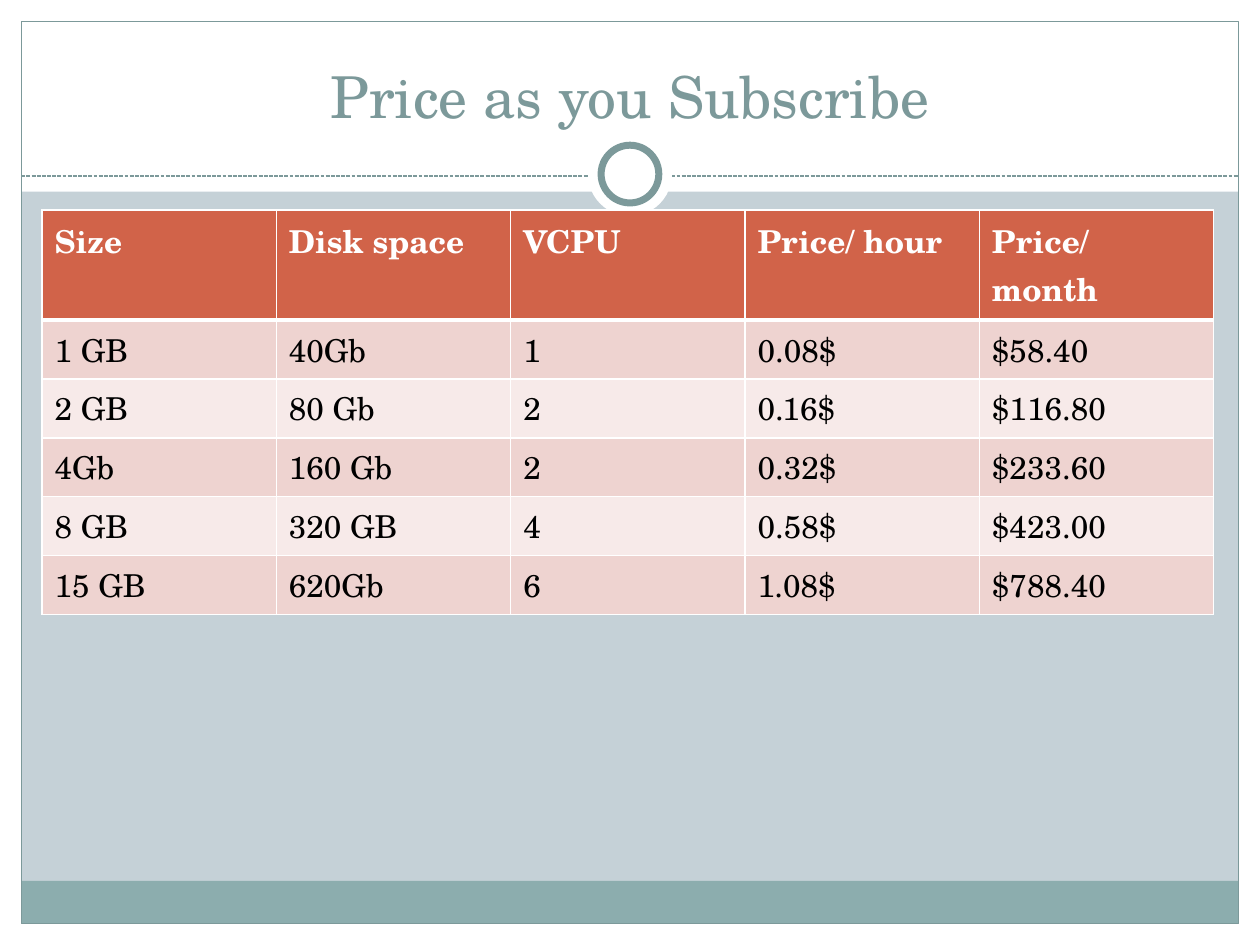
from lxml.etree import SubElement
from pptx import Presentation
from pptx.dml.color import RGBColor
from pptx.enum.dml import MSO_LINE
from pptx.enum.shapes import MSO_CONNECTOR, MSO_SHAPE
from pptx.enum.text import MSO_ANCHOR, PP_ALIGN
from pptx.oxml.ns import qn
from pptx.util import Pt

WHITE = RGBColor(0xFF, 0xFF, 0xFF)
BLACK = RGBColor(0, 0, 0)
BACKGROUND = RGBColor(0xC5, 0xD1, 0xD7)
TEAL = RGBColor(0x7C, 0x99, 0x9A)
FOOTER = RGBColor(0x8C, 0xAD, 0xAE)
HEADER = RGBColor(0xD1, 0x63, 0x49)
BANDS = (RGBColor(0xF7, 0xEA, 0xE9), RGBColor(0xEE, 0xD3, 0xD0))
FONT = "TeX Gyre Schola"
WIDTH, HEIGHT = 720, 540
MARGIN = 12.2

PRICES = [
    ("Size", "Disk space", "VCPU", "Price/ hour", "Price/ month"),
    ("1 GB", "40Gb", "1", "0.08$", "$58.40"),
    ("2 GB", "80 Gb", "2", "0.16$", "$116.80"),
    ("4Gb", "160 Gb", "2", "0.32$", "$233.60"),
    ("8 GB", "320 GB", "4", "0.58$", "$423.00"),
    ("15 GB", "620Gb", "6", "1.08$", "$788.40"),
]


def add_shape(slide, kind, box, fill=None, line_width=None):
    sp = slide.shapes.add_shape(kind, *map(Pt, box))
    sp.shadow.inherit = False
    if fill is None:
        sp.fill.background()
    else:
        sp.fill.solid()
        sp.fill.fore_color.rgb = fill
    if line_width is None:
        sp.line.fill.background()
    else:
        sp.line.color.rgb = TEAL
        sp.line.width = Pt(line_width)


def add_divider(slide, left, right, y):
    line = slide.shapes.add_connector(
        MSO_CONNECTOR.STRAIGHT, Pt(left), Pt(y), Pt(right), Pt(y))
    line.line.color.rgb = TEAL
    line.line.width = Pt(0.75)
    line.line.dash_style = MSO_LINE.SQUARE_DOT
    SubElement(line._element.spPr, qn("a:effectLst"))


def add_frame(slide, width, height, margin):
    """White margins and title band, footer bar, outline and ring."""
    rect, oval = MSO_SHAPE.RECTANGLE, MSO_SHAPE.OVAL
    right, bottom = width - margin, height - margin
    inner = width - 2 * margin
    for box in ((0, bottom, width, margin), (0, 0, width, 109.5),
                (0, 0, margin, height), (right, 0, margin, height)):
        add_shape(slide, rect, box, WHITE)
    add_shape(slide, rect, (margin, bottom - 24.4, inner, 24.4), FOOTER)
    add_shape(slide, rect, (margin, margin, inner, height - 2 * margin),
              line_width=0.75)
    add_divider(slide, margin, right, 100.6)
    for size, line_width in ((48, None), (33, 4)):
        add_shape(slide, oval, ((width - size) / 2, 99.5 - size / 2, size, size),
                  WHITE, line_width)


def format_font(font, size, color, bold=False):
    font.name, font.size, font.bold = FONT, Pt(size), bold
    font.color.rgb = color


def place_title(slide, text, box):
    title = slide.shapes.title
    title.left, title.top, title.width, title.height = map(Pt, box)
    tf = title.text_frame
    tf.text = text
    tf.word_wrap = True
    tf.vertical_anchor = MSO_ANCHOR.BOTTOM
    p = tf.paragraphs[0]
    p.alignment = PP_ALIGN.CENTER
    format_font(p.runs[0].font, 33, TEAL)
    slide.shapes._spTree.append(title._element)  # in front of the title band


def set_borders(cell, bottom_width):
    """Borders must precede the fill in the cell properties."""
    tc_pr = cell._tc.get_or_add_tcPr()
    for side, width in (("L", 1), ("R", 1), ("T", 1), ("B", bottom_width)):
        ln = SubElement(tc_pr, qn(f"a:ln{side}"), w=str(Pt(width)))
        fill = SubElement(ln, qn("a:solidFill"))
        SubElement(fill, qn("a:srgbClr"), val=str(WHITE))


def add_price_table(slide, rows, box):
    shape = slide.shapes.add_table(len(rows), len(rows[0]), *map(Pt, box))
    table = shape.table
    for i, row in enumerate(rows):
        is_header = i == 0
        for j, text in enumerate(row):
            cell = table.cell(i, j)
            set_borders(cell, 3 if is_header else 1)
            cell.fill.solid()
            cell.fill.fore_color.rgb = HEADER if is_header else BANDS[i % 2]
            cell.text_frame.text = text
            format_font(cell.text_frame.paragraphs[0].runs[0].font, 18,
                        WHITE if is_header else BLACK, is_header)


def main():
    prs = Presentation()
    prs.slide_width, prs.slide_height = Pt(WIDTH), Pt(HEIGHT)
    slide = prs.slides.add_slide(prs.slide_layouts[5])
    slide.background.fill.solid()
    slide.background.fill.fore_color.rgb = BACKGROUND
    add_frame(slide, WIDTH, HEIGHT, MARGIN)
    place_title(slide, "Price as you Subscribe", (24, 18, 672, 60))
    add_price_table(slide, PRICES, (24, 120, 669.6, 196.8))
    prs.save("out.pptx")


if __name__ == "__main__":
    main()
